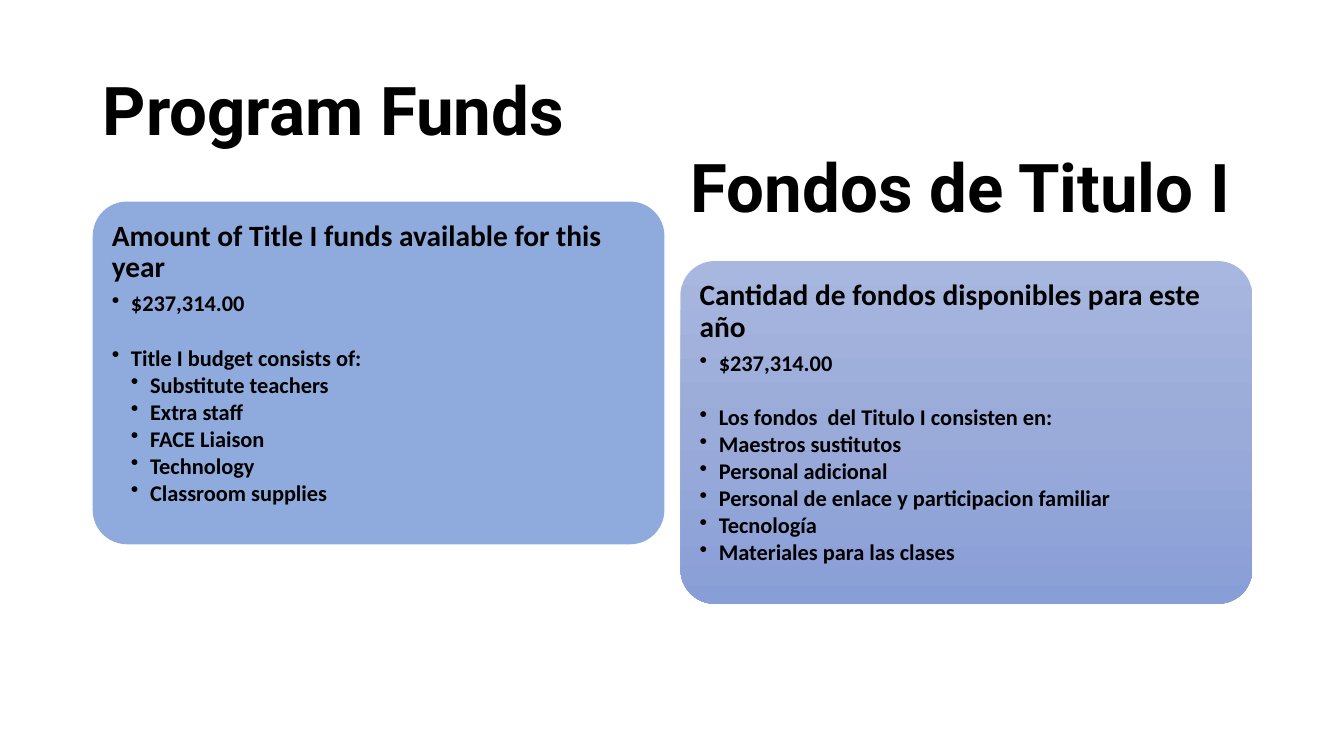
"""Build the bilingual Title I program funds slide."""
from copy import deepcopy

from lxml.etree import SubElement
from pptx import Presentation
from pptx.dml.color import RGBColor
from pptx.enum.shapes import MSO_SHAPE as SHAPE
from pptx.enum.text import MSO_ANCHOR as ANCHOR, PP_ALIGN as ALIGN
from pptx.oxml.ns import qn
from pptx.util import Inches, Pt


def rgb(value):
    return RGBColor.from_string(value)


def write(p, text, size, font="Calibri"):
    r = p.add_run()
    r.text = text
    for name, value in {"name": font, "size": Pt(size), "bold": True}.items():
        setattr(r.font, name, value)
    r.font.color.rgb = rgb("000000")


prs = Presentation()
prs.slide_width, prs.slide_height = Inches(13.33), Inches(7.5)
s = prs.slides.add_slide(prs.slide_layouts[6])

titles = [
    ("Program Funds", (0.92, 0.4, 5.75, 1.45), ANCHOR.MIDDLE, 0.9),
    ("Fondos de Titulo I", (6.75, 1.39, 6.5, 0.91), ANCHOR.TOP, 1.0),
]
for text, box, anchor, spacing in titles:
    tf = s.shapes.add_textbox(*map(Inches, box)).text_frame
    tf.word_wrap, tf.vertical_anchor = True, anchor
    p = tf.paragraphs[0]
    p.line_spacing = spacing
    write(p, text, 48, "Roboto")

AMOUNT = "$237,314.00"
cards = [
    (0.92, 2, ["8FAADC"], "Amount of Title I funds available for this year",
     "Title I budget consists of:", 2,
     ["Substitute teachers", "Extra staff", "FACE Liaison", "Technology",
      "Classroom supplies"]),
    (6.75, 2.59, ["A8B7DF", "9AABD9", "889ED7"],
     "Cantidad de fondos disponibles para este año",
     "Los fondos\u00a0 del Titulo I consisten en:", 1,
     ["Maestros sustitutos", "Personal adicional",
      "Personal de enlace y participacion familiar", "Tecnología",
      "Materiales para las clases"]),
]
for left, top, colors, heading, intro, item_level, items in cards:
    sp = s.shapes.add_shape(SHAPE.ROUNDED_RECTANGLE, Inches(left), Inches(top),
                            Inches(5.67), Inches(3.4))
    sp.adjustments[0] = 0.1
    sp.shadow.inherit = False
    sp.line.fill.background()
    if len(colors) == 1:
        sp.fill.solid()
        sp.fill.fore_color.rgb = rgb(colors[0])
    else:
        sp.fill.gradient()
        sp.fill.gradient_angle = 270
        stops = next(sp._element.iter(qn("a:gsLst")))
        stops.insert(1, deepcopy(stops[0]))
        for i, (stop, color) in enumerate(zip(sp.fill.gradient_stops, colors)):
            stop.position = i / (len(colors) - 1)
            stop.color.rgb = rgb(color)

    tf = sp.text_frame
    tf.word_wrap, tf.vertical_anchor = True, ANCHOR.TOP
    for side in ("left", "right", "top", "bottom"):
        setattr(tf, f"margin_{side}", Inches(0.09))
    lines = [(heading, 0, 21, 6), (AMOUNT, 1, 16, 21.6), (intro, 1, 16, 2)]
    lines += [(item, item_level, 16, 2) for item in items]
    for i, (text, level, size, after) in enumerate(lines):
        p = tf.add_paragraph() if i else tf.paragraphs[0]
        for name, value in {"alignment": ALIGN.LEFT, "level": level,
                            "line_spacing": 0.9, "space_after": Pt(after)}.items():
            setattr(p, name, value)
        if level:
            pPr = p._p.get_or_add_pPr()
            pPr.set("marL", str(Inches(0.19 * level)))
            pPr.set("indent", str(Inches(-0.19)))
            SubElement(pPr, qn("a:buChar"), char="•")
        write(p, text, size)

prs.save("out.pptx")
